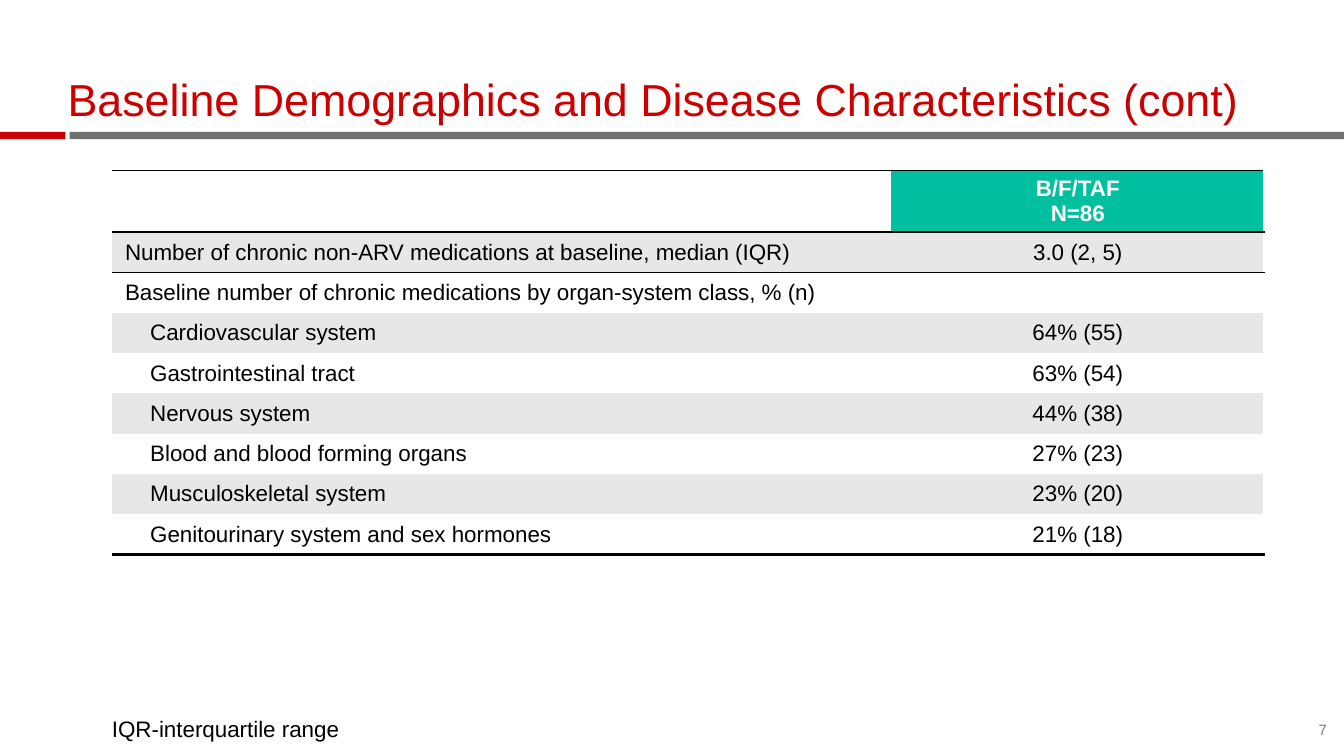
from lxml.etree import SubElement
from pptx import Presentation
from pptx.dml.color import RGBColor
from pptx.enum.shapes import MSO_SHAPE as Shape
from pptx.enum.text import MSO_ANCHOR as Anchor, PP_ALIGN as Align
from pptx.oxml.ns import qn
from pptx.util import Pt

PX = 9144  # EMU; 100 px to the inch
RED, GREY, GREEN, BAND = "CC0000", "717171", "00C0A0", "E7E7E7"
BLACK, WHITE, PALE = "000000", "FFFFFF", "7F7F7F"

MEDICATIONS = [
    ("Number of chronic non-ARV medications at baseline, median (IQR)", "3.0 (2, 5)"),
    ("Baseline number of chronic medications by organ-system class, % (n)", ""),
    ("Cardiovascular system", "64% (55)"),
    ("Gastrointestinal tract", "63% (54)"),
    ("Nervous system", "44% (38)"),
    ("Blood and blood forming organs", "27% (23)"),
    ("Musculoskeletal system", "23% (20)"),
    ("Genitourinary system and sex hormones", "21% (18)"),
]
FIRST_ORGAN_ROW = 3
# Rules under table rows: row index to points
RULES = {0: 1.5, 1: 1.5, len(MEDICATIONS): 2}


def color(value):
    return RGBColor.from_string(value)


class SlideBuilder:
    font = "Arial"

    def __init__(self, presentation):
        self.slide = presentation.slides.add_slide(presentation.slide_layouts[6])

    def bar(self, left, top, width, height, fill):
        shape = self.slide.shapes.add_shape(
            Shape.RECTANGLE, left * PX, top * PX, width * PX, height * PX)
        shape.shadow.inherit = False
        shape.fill.solid()
        shape.fill.fore_color.rgb = color(fill)
        shape.line.fill.background()

    def add_lines(self, frame, lines, size, ink, align=Align.LEFT, bold=False, spacing=None):
        for index, line in enumerate(lines):
            paragraph = frame.paragraphs[0] if index == 0 else frame.add_paragraph()
            paragraph.alignment = align
            paragraph.line_spacing = spacing
            paragraph.font.size = Pt(size)
            if line:
                run = paragraph.add_run()
                run.text = line
                run.font.name = self.font
                run.font.size = Pt(size)
                run.font.bold = bold
                run.font.color.rgb = color(ink)

    def text(self, left, top, width, height, content, size, ink,
             anchor=Anchor.TOP, wrap=True, **style):
        box = self.slide.shapes.add_textbox(left * PX, top * PX, width * PX, height * PX)
        frame = box.text_frame
        frame.word_wrap = wrap
        frame.vertical_anchor = anchor
        frame.margin_left = frame.margin_right = 0
        frame.margin_top = frame.margin_bottom = 0
        self.add_lines(frame, [content], size, ink, **style)

    def table(self, left, top, widths, heights):
        frame = self.slide.shapes.add_table(
            len(heights), len(widths), left * PX, top * PX,
            sum(widths) * PX, sum(heights) * PX)
        table = frame.table
        table.first_row = table.horz_banding = False
        for column, width in zip(table.columns, widths):
            column.width = width * PX
        for row, height in zip(table.rows, heights):
            row.height = height * PX
        return table

    def cell(self, cell, lines, fill, borders, side, end, ink=BLACK, **style):
        """Fill one cell; side and end are its margins, borders maps edge to (colour, points)."""
        self.borders(cell, borders)
        if fill:
            cell.fill.solid()
            cell.fill.fore_color.rgb = color(fill)
        else:
            cell.fill.background()
        cell.vertical_anchor = Anchor.MIDDLE
        cell.margin_left = cell.margin_right = side * PX
        cell.margin_top = cell.margin_bottom = end * PX
        self.add_lines(cell.text_frame, lines, 16, ink, **style)

    def borders(self, cell, borders):
        """Draw the given edges and clear the others."""
        properties = cell._tc.get_or_add_tcPr()
        for edge in "LRTB":
            line = SubElement(properties, qn(f"a:ln{edge}"))
            if edge in borders:
                ink, points = borders[edge]
                line.set("w", str(Pt(points)))
                solid = SubElement(line, qn("a:solidFill"))
                SubElement(solid, qn("a:srgbClr")).set("val", ink)
            else:
                SubElement(line, qn("a:noFill"))


def row_borders(row, column):
    borders = {"T": (BLACK, 1)} if row == 0 else {}
    if row - 1 in RULES:
        borders["T"] = (BLACK, RULES[row - 1])
    if row in RULES:
        borders["B"] = (BLACK, RULES[row])
    if column == 1:
        borders["R"] = (WHITE, 1.5)
    return borders


def add_medication_table(builder):
    table = builder.table(111, 169, [773, 370], [61] + [40] * len(MEDICATIONS))
    builder.cell(table.cell(0, 0), [""], None, row_borders(0, 0), 7, 4)
    builder.cell(table.cell(0, 1), ["B/F/TAF", "N=86"], GREEN, row_borders(0, 1), 7, 4,
                 ink=WHITE, align=Align.CENTER, bold=True)
    for row, values in enumerate(MEDICATIONS, start=1):
        fill = BAND if row % 2 else WHITE
        for column, value in enumerate(values):
            builder.cell(table.cell(row, column), [value], fill, row_borders(row, column),
                         13, 5, align=Align.CENTER if column else Align.LEFT)
        if row >= FIRST_ORGAN_ROW:
            table.cell(row, 0).margin_left = 38 * PX


def main():
    presentation = Presentation()
    presentation.slide_width = 1333 * PX
    presentation.slide_height = 750 * PX
    builder = SlideBuilder(presentation)
    builder.bar(69, 131, 1264, 7, GREY)
    builder.bar(0, 131, 65, 7, RED)
    builder.text(67, 51, 1200, 74, "Baseline Demographics and Disease Characteristics (cont)",
                 32, RED, anchor=Anchor.BOTTOM, spacing=0.9)
    add_medication_table(builder)
    builder.text(111, 713, 228, 24, "IQR-interquartile range", 16, BLACK,
                 wrap=False, spacing=0.9)
    builder.text(1280, 715, 36, 18, "7", 10.7, PALE, anchor=Anchor.BOTTOM, align=Align.RIGHT)
    presentation.save("out.pptx")


if __name__ == "__main__":
    main()
